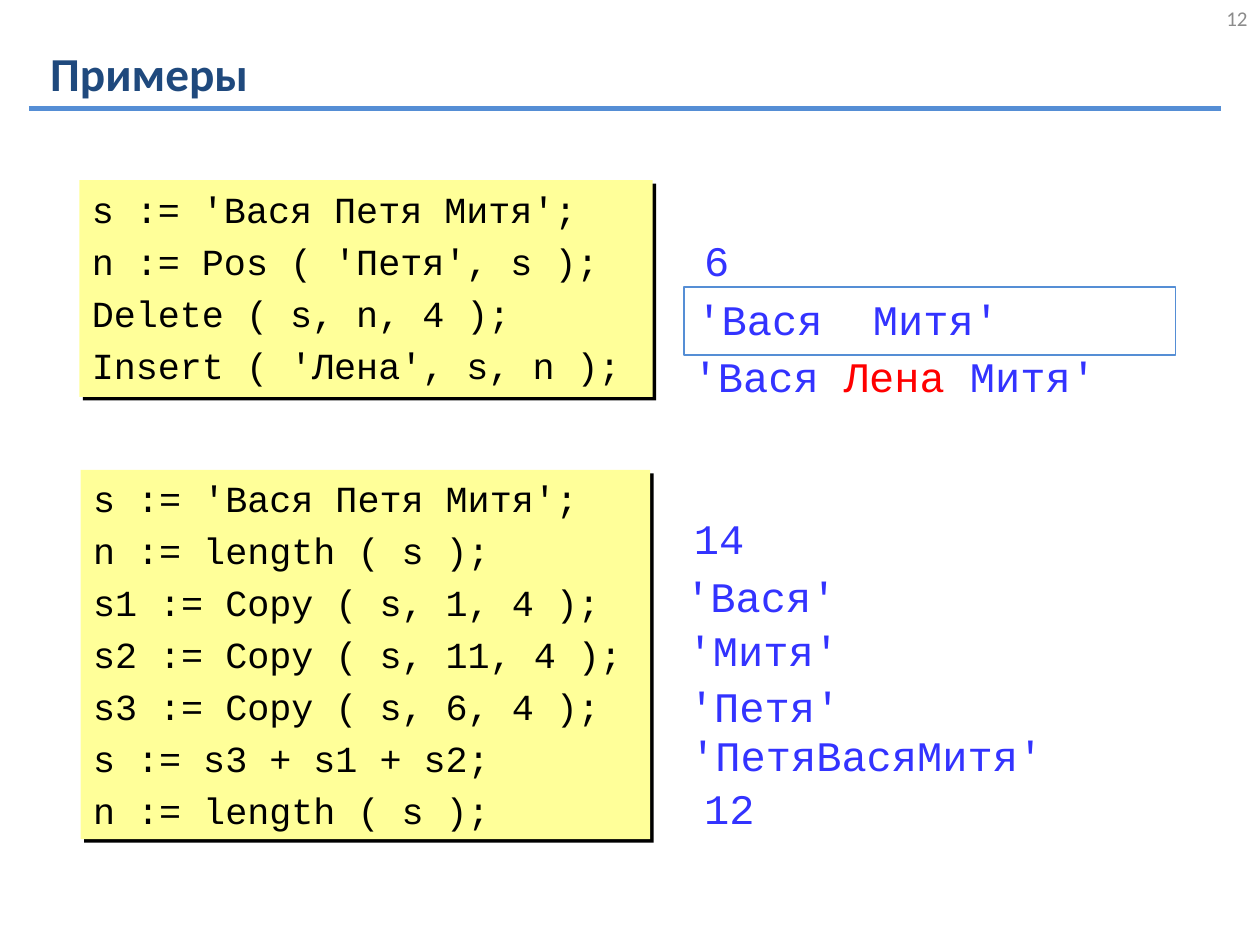
from lxml import etree
from pptx import Presentation, util as u
from pptx.dml.color import RGBColor
from pptx.enum import shapes, text
from pptx.oxml import parse_xml
from pptx.oxml.ns import nsdecls, qn

COLORS = {
    "title": "1F497D", "number": "8C8C8C", "rule": "558ED5", "panel": "FFFF99",
    "code": "000000", "result": "3333FF", "accent": "FF0000", "shadow": "000000",
}
CODE_FONT = "Courier New"
HEADING_FONT = "Calibri"
RESULT_HEIGHT = 0.54

SEARCH_CODE = [
    "s := 'Вася Петя Митя';",
    "n := Pos ( 'Петя', s );",
    "Delete ( s, n, 4 );",
    "Insert ( 'Лена', s, n );",
]
COPY_CODE = [
    "s := 'Вася Петя Митя';",
    "n := length ( s );",
    "s1 := Copy ( s, 1, 4 );",
    "s2 := Copy ( s, 11, 4 );",
    "s3 := Copy ( s, 6, 4 );",
    "s := s3 + s1 + s2;",
    "n := length ( s );",
]
COPY_RESULTS = [
    (5.41, 4.02, 0.66, "14"),
    (5.34, 4.48, 1.42, "'Вася'"),
    (5.36, 4.91, 1.42, "'Митя'"),
    (5.37, 5.35, 1.42, "'Петя'"),
    (5.38, 5.74, 3.81, "'ПетяВасяМитя'"),
    (5.49, 6.16, 0.66, "12"),
]


def rgb(name):
    """Return the named colour."""
    return RGBColor.from_string(COLORS[name])


def style_span(span, size, font, color, bold=False):
    """Set the font of one run."""
    span.font.size = u.Pt(size)
    span.font.name = font
    span.font.bold = bold
    span.font.color.rgb = rgb(color)


def add_heading(slide, bounds, words, size, color, bold=False, align=text.PP_ALIGN.LEFT):
    """Add one line of vertically centred heading text."""
    box = slide.shapes.add_textbox(*map(u.Inches, bounds))
    frame = box.text_frame
    frame.word_wrap = True
    frame.vertical_anchor = text.MSO_ANCHOR.MIDDLE
    frame.text = words
    para = frame.paragraphs[0]
    para.alignment = align
    style_span(para.runs[0], size, HEADING_FONT, color, bold)


def add_rectangle(slide, bounds):
    """Add a rectangle with top-left text and no fill, line or shadow."""
    box = slide.shapes.add_shape(shapes.MSO_SHAPE.RECTANGLE, *map(u.Inches, bounds))
    box.shadow.inherit = False
    box.fill.background()
    box.line.fill.background()
    box.text_frame.vertical_anchor = text.MSO_ANCHOR.TOP
    return box


def add_hard_shadow(box):
    """Give a shape a sharp shadow towards the lower right."""
    effects = box._element.spPr.find(qn("a:effectLst"))
    effects.append(parse_xml(
        f'<a:outerShdw {nsdecls("a")} blurRad="0" dist="{u.Pt(2.8)}" dir="2700000" '
        f'algn="tl" rotWithShape="0"><a:srgbClr val="{COLORS["shadow"]}"/></a:outerShdw>'
    ))


def add_code(slide, bounds, lines):
    """Add a yellow panel with one paragraph for each line of code."""
    box = add_rectangle(slide, bounds)
    box.fill.solid()
    box.fill.fore_color.rgb = rgb("panel")
    add_hard_shadow(box)
    box.text_frame.word_wrap = False
    box.text_frame.text = "\n".join(lines)
    for para in box.text_frame.paragraphs:
        para.alignment = text.PP_ALIGN.LEFT
        para.space_before = u.Pt(4.5)
        style_span(para.runs[0], 21, CODE_FONT, "code")


def write_result(box, *parts):
    """Write a result from pairs of words and colour."""
    box.text_frame.word_wrap = True
    para = box.text_frame.paragraphs[0]
    para.alignment = text.PP_ALIGN.LEFT
    para.space_before = u.Pt(5)
    for words, color in parts:
        span = para.add_run()
        span.text = words
        style_span(span, 24, CODE_FONT, color)


def add_result(slide, left, top, width, *parts):
    """Add a result in a plain text box."""
    bounds = (left, top, width, RESULT_HEIGHT)
    write_result(slide.shapes.add_textbox(*map(u.Inches, bounds)), *parts)


def add_framed_result(slide, left, top, width, words):
    """Add a result in an outlined rectangle."""
    box = add_rectangle(slide, (left, top, width, RESULT_HEIGHT))
    box.line.color.rgb = rgb("rule")
    box.line.width = u.Pt(1)
    write_result(box, (words, "result"))


def add_rule(slide, left, right, top):
    """Add the horizontal line below the title."""
    rule = slide.shapes.add_connector(
        shapes.MSO_CONNECTOR.STRAIGHT, *map(u.Inches, (left, top, right, top)))
    rule.line.color.rgb = rgb("rule")
    rule.line.width = u.Pt(3)
    etree.SubElement(rule._element.spPr, qn("a:effectLst"))


def main():
    """Build the slide and save the deck."""
    deck = Presentation()
    deck.slide_width, deck.slide_height = u.Inches(10), u.Inches(7.5)
    slide = deck.slides.add_slide(deck.slide_layouts[6])

    add_heading(slide, (0.3, 0.28, 9.7, 0.59), "Примеры", 27, "title", bold=True)
    add_heading(slide, (7.67, -0.05, 2.33, 0.38), "12", 12, "number",
                align=text.PP_ALIGN.RIGHT)

    add_code(slide, (0.63, 1.43, 4.55, 1.72), SEARCH_CODE)
    add_result(slide, 5.4, 2.73, 3.9,
               ("'Вася ", "result"), ("Лена", "accent"), (" Митя'", "result"))
    add_code(slide, (0.64, 3.73, 4.52, 2.93), COPY_CODE)
    add_framed_result(slide, 5.43, 2.28, 3.9, "'Вася  Митя'")
    for left, top, width, words in COPY_RESULTS:
        add_result(slide, left, top, width, (words, "result"))
    add_result(slide, 5.49, 1.81, 0.66, ("6", "result"))

    add_rule(slide, 0.23, 9.69, 0.86)
    deck.save("out.pptx")


if __name__ == "__main__":
    main()
